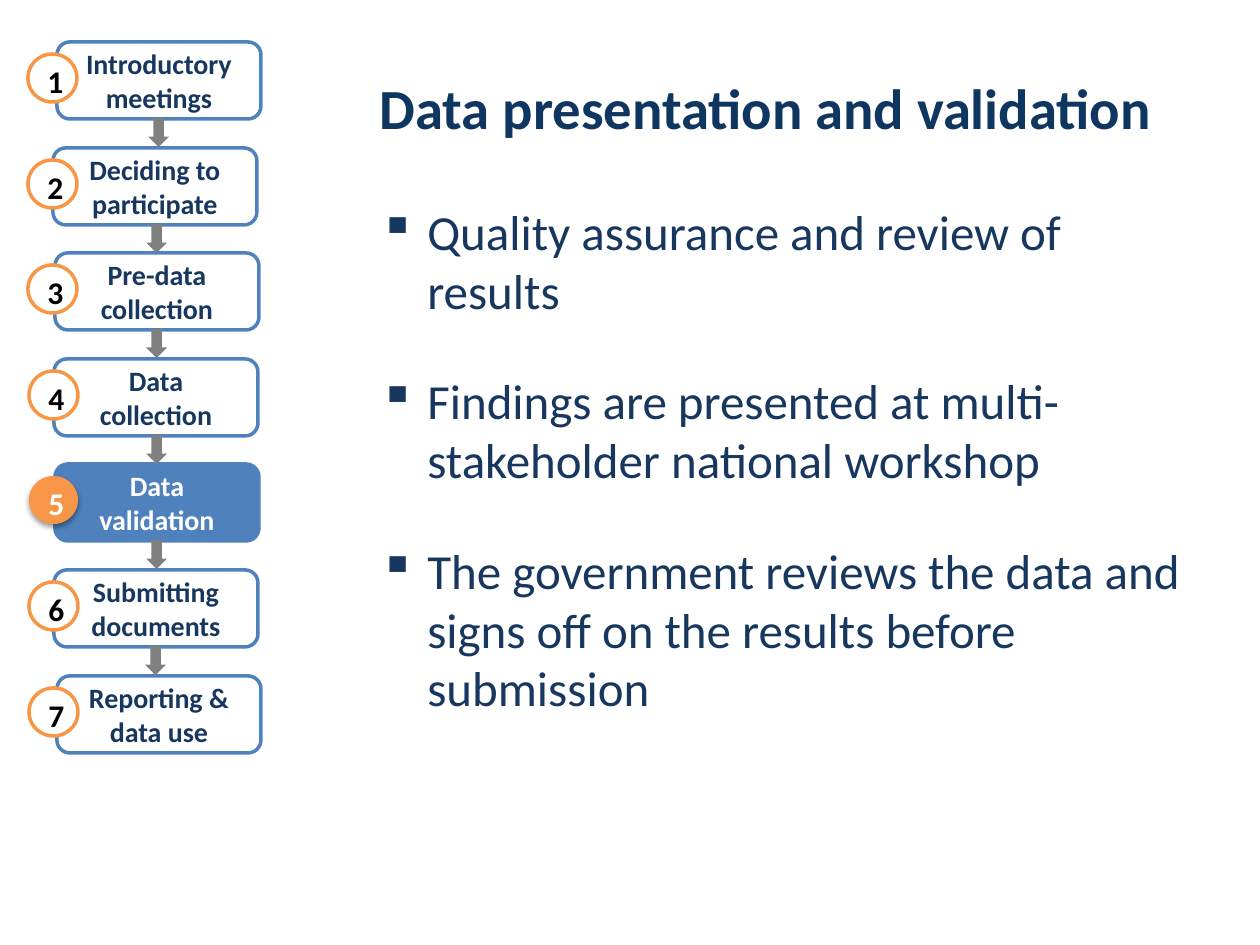
from lxml import etree
from pptx import Presentation
from pptx.dml.color import RGBColor
from pptx.enum.shapes import MSO_SHAPE
from pptx.enum.text import MSO_ANCHOR, PP_ALIGN
from pptx.oxml import parse_xml
from pptx.oxml.ns import nsdecls, qn
from pptx.util import Pt

BOX, OVAL, ARROW = MSO_SHAPE.ROUNDED_RECTANGLE, MSO_SHAPE.OVAL, MSO_SHAPE.RIGHT_ARROW
MIDDLE, TOP = MSO_ANCHOR.MIDDLE, MSO_ANCHOR.TOP
LEFT, CENTER = PP_ALIGN.LEFT, PP_ALIGN.CENTER

TITLE = "Data presentation and validation"
BULLETS = [
    "Quality assurance and review of results",
    "Findings are presented at multi-stakeholder national workshop",
    "The government reviews the data and signs off on the results before submission",
]
STEPS = [
    ("Introductory meetings", 57, 28, 144),
    ("Deciding to participate", 53, 28, 142),
    ("Pre-data collection", 55, 28, 142),
    ("Data collection", 54, 29, 142),
    ("Data validation", 55, 29, 142),
    ("Submitting documents", 54, 29, 141),
    ("Reporting & data use", 57, 29, None),
]
CURRENT = 4
STEP_TOP, STEP_PITCH = 42, 105.6
NAVY, BLUE, ORANGE, GREY = "17375E", "4F81BD", "F79646", "808080"
WHITE, BLACK, TITLE_BLUE = "FFFFFF", "000000", "0F3661"
SHADOW = (
    f'<a:effectLst {nsdecls("a")}><a:outerShdw blurRad="39400" dist="20300" dir="5400000" '
    'rotWithShape="0"><a:srgbClr val="000000"><a:alpha val="38000"/></a:srgbClr>'
    '</a:outerShdw></a:effectLst>'
)


def px(n):
    return round(n * 914400 / 126)


def rgb(color):
    return RGBColor.from_string(color)


def write(p, text, size, color, bold=False, align=LEFT):
    p.alignment = align
    r = p.add_run()
    r.text = text
    r.font.color.rgb = rgb(color)
    for name, value in {"name": "Calibri", "size": Pt(size), "bold": bold}.items():
        setattr(r.font, name, value)


def add_shape(s, kind, x, y, w, h, fill, line=None):
    sp = s.shapes.add_shape(kind, px(x), px(y), px(w), px(h))
    sp.shadow.inherit = False
    sp.fill.solid()
    sp.fill.fore_color.rgb = rgb(fill)
    if line:
        sp.line.color.rgb = rgb(line)
        sp.line.width = Pt(2)
    else:
        sp.line.fill.background()
    return sp


def add_steps(s):
    tops = [round(STEP_TOP + STEP_PITCH * i) for i in range(len(STEPS))]
    for i, (label, x, _, _) in enumerate(STEPS):
        fill, color = (BLUE, WHITE) if i == CURRENT else (WHITE, NAVY)
        sp = add_shape(s, BOX, x, tops[i], 204, 77, fill, BLUE)
        sp.text_frame.vertical_anchor = MIDDLE
        write(sp.text_frame.paragraphs[0], label, 16, color, True, CENTER)
    for top, (_, _, _, x) in zip(tops, STEPS):
        if x is not None:
            add_shape(s, ARROW, x, top + 80, 29, 21, GREY).rotation = 90
    for i, (_, _, x, _) in enumerate(STEPS):
        fill, line, color = (ORANGE, None, WHITE) if i == CURRENT else (WHITE, ORANGE, BLACK)
        sp = add_shape(s, OVAL, x, tops[i] + 12, 49, 48, fill, line)
        if i == CURRENT:
            sppr = sp._element.spPr
            sppr.replace(sppr.find(qn("a:effectLst")), parse_xml(SHADOW))
        tf = sp.text_frame
        frame = {"margin_left": px(6), "margin_right": 0, "margin_top": px(5),
                 "margin_bottom": 0, "word_wrap": False, "vertical_anchor": MIDDLE}
        for name, value in frame.items():
            setattr(tf, name, value)
        write(tf.paragraphs[0], str(i + 1), 18, color, True, CENTER)


def add_title(s):
    sp = s.shapes.title
    place = {"left": 367, "top": 38, "width": 845, "height": 137}
    for name, value in place.items():
        setattr(sp, name, px(value))
    sp.text_frame.vertical_anchor = MIDDLE
    write(sp.text_frame.paragraphs[0], TITLE, 32.4, TITLE_BLUE, True)


def add_bullets(s):
    tf = s.shapes.add_textbox(px(367), px(195), px(845), px(537)).text_frame
    tf.word_wrap = True
    tf.vertical_anchor = TOP
    for i, text in enumerate(BULLETS):
        p = tf.add_paragraph() if i else tf.paragraphs[0]
        ppr = p._p.get_or_add_pPr()
        ppr.set("marL", str(px(48)))
        ppr.set("indent", str(px(-48)))
        etree.SubElement(ppr, qn("a:buChar")).set("char", "▪")
        p.space_before = Pt(5.6 if i else 0)
        p.space_after = Pt(24)
        write(p, text, 28, NAVY)


def main():
    """Build the data validation slide with its seven-step process."""
    prs = Presentation()
    prs.slide_width, prs.slide_height = px(1260), px(945)
    s = prs.slides.add_slide(prs.slide_layouts[5])
    add_steps(s)
    add_title(s)
    add_bullets(s)
    prs.save("out.pptx")


if __name__ == "__main__":
    main()
